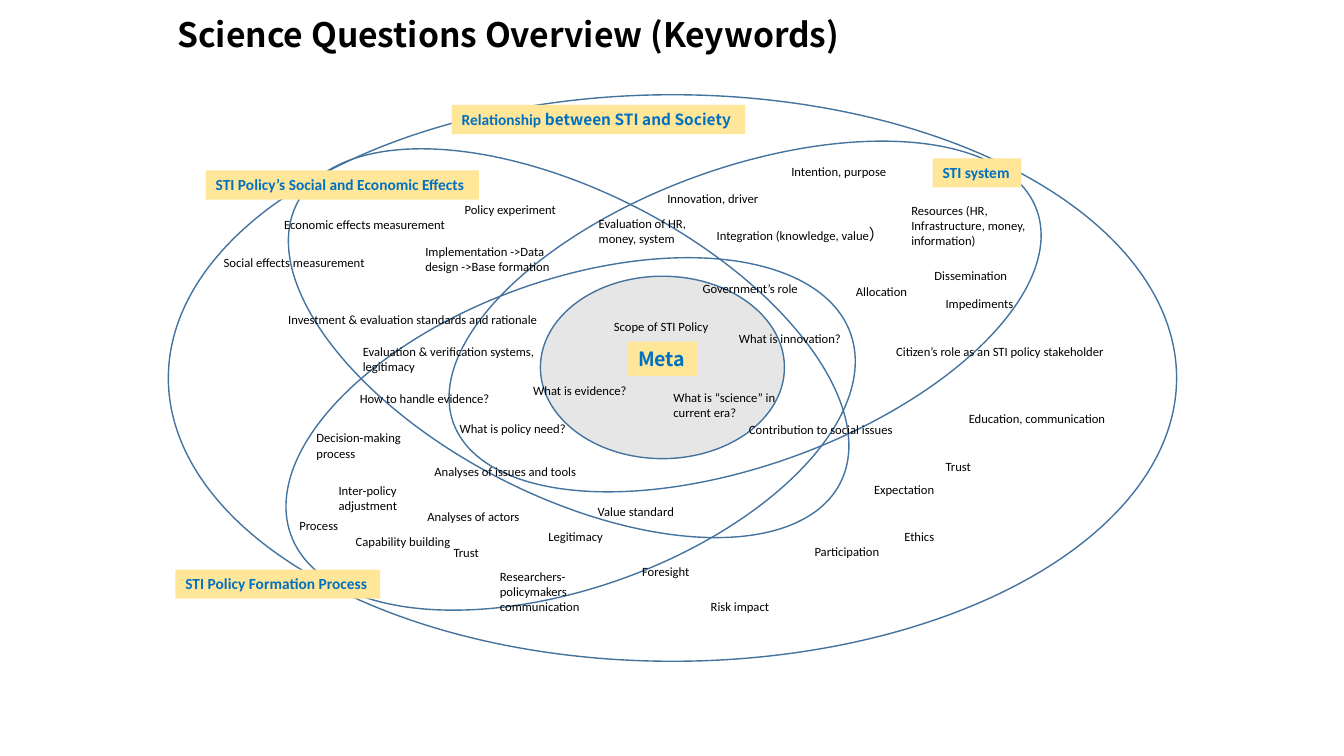
from lxml import etree
from pptx import Presentation, util as u
from pptx.dml.color import RGBColor
from pptx.enum import shapes, text
from pptx.oxml.ns import qn

CELL = u.Inches(0.01)  # the page is a grid of 1333 columns by 750 rows
SANS, CJK = "Calibri", "Noto Sans CJK JP"
BLUE, OUTLINE, YELLOW, GREY = "0070C0", "43739E", "FFE699", "E7E6E6"


def paint(color_format, color):
    color_format.rgb = RGBColor.from_string(color)


def write(box, words, font=SANS, size=9, color="000000", bold=False, wrap=False):
    """Fill a box with text; words is a string or a list of (string, font, size)."""
    frame = box.text_frame
    frame.word_wrap = wrap
    frame.auto_size = text.MSO_AUTO_SIZE.SHAPE_TO_FIT_TEXT
    frame.vertical_anchor = text.MSO_ANCHOR.TOP
    runs = [(words, font, size)] if isinstance(words, str) else words
    para = frame.paragraphs[0]
    para.alignment = text.PP_ALIGN.LEFT
    for content, face, points in runs:
        for index, line in enumerate(content.split("\n")):
            if index:
                para = frame.add_paragraph()
                para.alignment = text.PP_ALIGN.LEFT
            span = para.add_run()
            span.text = line
            span.font.name, span.font.size, span.font.bold = face, u.Pt(points), bold
            paint(span.font.color, color)
            etree.SubElement(span._r.get_or_add_rPr(), qn("a:ea"), typeface=face)


deck = Presentation()
deck.slide_width, deck.slide_height = CELL * 1333, CELL * 750
page = deck.slides.add_slide(deck.slide_layouts[6])

# Overlapping fields: left, top, width, height, rotation, fill
fields = [
    (536, 274, 242, 181, 0, GREY),
    (261, 190, 606, 301, 27.3, None),
    (431, 167, 616, 294, 339.9, None),
    (271, 278, 590, 305, 340.2, None),
    (167, 94, 1000, 562, 0, None),
]
for *place, angle, fill in fields:
    field = page.shapes.add_shape(shapes.MSO_SHAPE.OVAL, *(CELL * n for n in place))
    field.shadow.inherit = False
    field.rotation = angle
    field.line.width = u.Pt(1)
    paint(field.line.color, OUTLINE)
    if fill:
        field.fill.solid()
        paint(field.fill.fore_color, fill)
    else:
        field.fill.background()

# Keywords: text, left, top, width, lines; the first list stays unwrapped
unwrapped = [
    ("How to handle evidence?", 347, 383, 150, 1),
    ("Social effects measurement", 212, 248, 162, 1),
    ("Economic effects measurement", 272, 210, 182, 1),
    ("Contribution to social issues", 733, 414, 164, 1),
    ("Innovation, driver", 652, 184, 112, 1),
    ([("Integration (knowledge, value", SANS, 9), ("）", CJK, 11)], 701, 218, 189, 1),
    ("Allocation", 839, 277, 72, 1),
    ("Impediments", 928, 289, 88, 1),
    ("Dissemination", 917, 261, 93, 1),
    ("Intention, purpose", 775, 158, 116, 1),
    ("Evaluation & verification systems,\nlegitimacy", 350, 336, 194, 2),
]
wrapped = [
    ("Value standard", 583, 495, 156, 1),
    ("Citizen’s role as an STI policy stakeholder", 879, 336, 247, 1),
    ("Evaluation of HR, money, system", 584, 209, 134, 2),
    ("Investment & evaluation standards and rationale", 276, 304, 281, 1),
    ("Policy experiment", 451, 195, 156, 1),
    ("Implementation ->Data design ->Base formation", 412, 237, 156, 2),
    ("Resources (HR,　Infrastructure, money, information)", 894, 196, 133, 3),
    ("Analyses of issues and tools", 421, 455, 208, 1),
    ("Analyses of actors", 414, 500, 208, 1),
    ("Process", 287, 509, 208, 1),
    ("Legitimacy", 534, 520, 116, 1),
    ("Decision-making process", 304, 422, 116, 2),
    ("Inter-policy adjustment", 326, 474, 116, 2),
    ("Capability building", 343, 525, 116, 1),
    ("Researchers-policymakers communication", 486, 559, 136, 3),
    ("Trust", 440, 536, 116, 1),
    ("Foresight", 627, 554, 140, 1),
    ("Risk impact", 695, 589, 172, 1),
    ("Expectation", 857, 473, 172, 1),
    ("Trust", 928, 450, 172, 1),
    ("Participation", 798, 535, 172, 1),
    ("Ethics", 887, 520, 172, 1),
    ("Education, communication", 951, 403, 249, 1),
    ("Scope of STI Policy", 599, 311, 153, 1),
    ("Government’s role", 687, 274, 131, 1),
    ("What is policy need?", 446, 413, 138, 1),
    ("What is innovation?", 723, 323, 168, 1),
    ("What is evidence?", 519, 375, 138, 1),
    ("What is “science” in current era?", 658, 382, 138, 2),
]
for keywords, wrap in ((unwrapped, False), (wrapped, True)):
    for words, left, top, width, lines in keywords:
        place = (left, top, width, 10 + 15 * lines)
        box = page.shapes.add_textbox(*(CELL * n for n in place))
        write(box, words, wrap=wrap)

# Yellow tags naming the fields: text, left, top, width, height
tags = [
    ([("STI Policy’s Social and Economic Effects", SANS, 11)], 204, 169, 271, 29),
    ([("STI system", SANS, 11)], 925, 157, 88, 29),
    ([("STI Policy Formation Process", SANS, 11)], 174, 565, 203, 29),
    ([("Relationship", SANS, 11), (" between STI and Society", CJK, 11)], 448, 104, 291, 29),
    ([("Meta", CJK, 14)], 623, 339, 69, 34),
]
for words, *place in tags:
    tag = page.shapes.add_shape(shapes.MSO_SHAPE.RECTANGLE, *(CELL * n for n in place))
    tag.shadow.inherit = False
    tag.line.fill.background()
    tag.fill.solid()
    paint(tag.fill.fore_color, YELLOW)
    write(tag, words, color=BLUE, bold=True)

title = page.shapes.add_textbox(*(CELL * n for n in (166, 9, 685, 50)))
write(title, "Science Questions Overview (Keywords)", font=CJK, size=24, bold=True)

deck.save("out.pptx")
